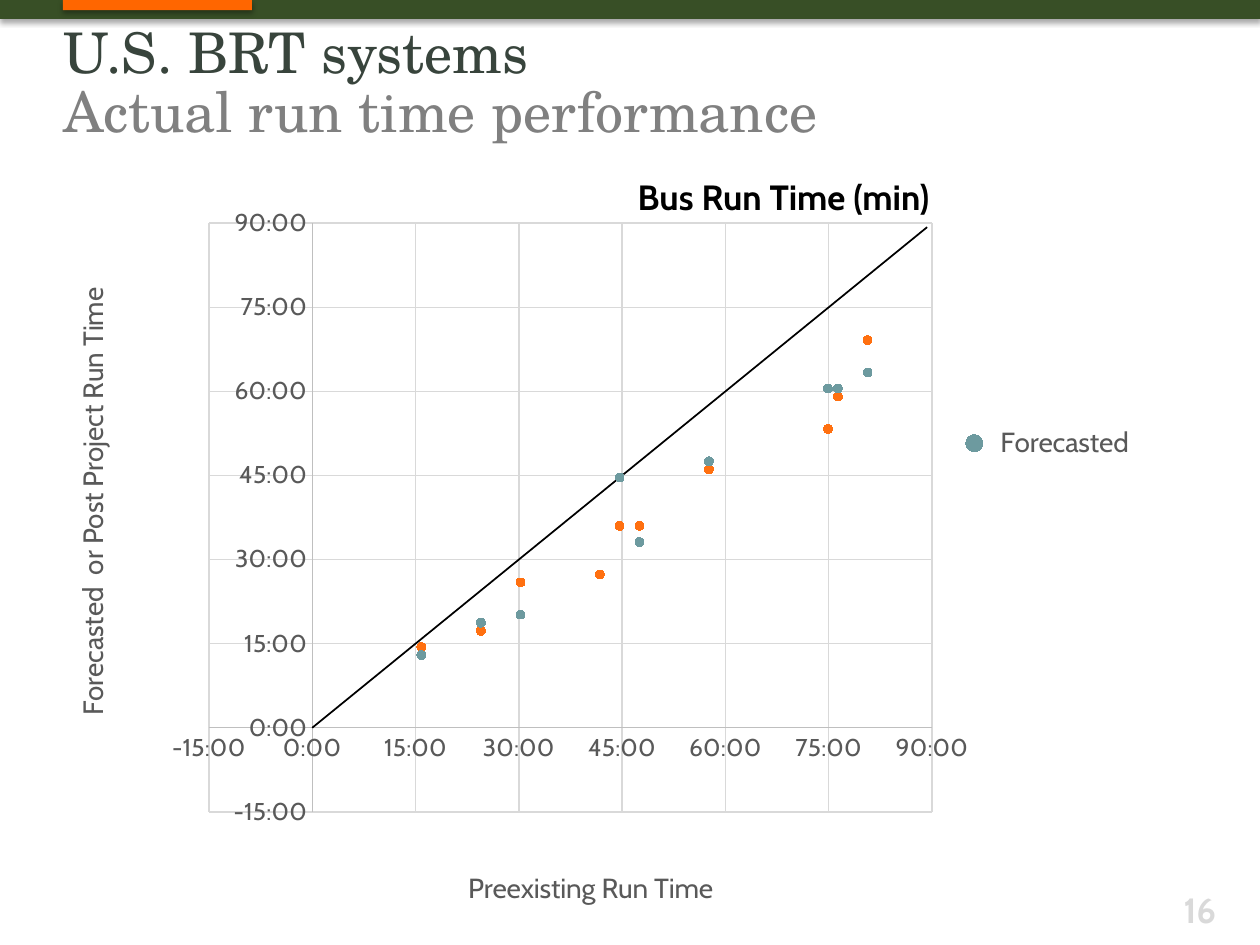
import dataclasses

import pptx
import pptx.chart.data
import pptx.dml.color
import pptx.enum.chart
import pptx.enum.shapes
import pptx.enum.text
import pptx.oxml
import pptx.oxml.ns
import pptx.util

QUARTER_HOUR = 15 / 1440
BEFORE = [0.033, 0.011, 0.056, 0.04, 0.021, 0.017, 0.052, 0.031, 0.053, 0.029]
FORECASTED = [0.023, 0.009, 0.044, 0.033, 0.014, 0.013, 0.042, 0.031, 0.042, None]
POST_PROJECT = [0.025, 0.01, 0.048, 0.032, 0.018, 0.012, 0.037, 0.025, 0.041, 0.019]
UNCHANGED = [0, 0.062]


@dataclasses.dataclass(frozen=True)
class Theme:
    heading_font: str = "TeX Gyre Schola"
    body_font: str = "Cabin"
    heading: str = "38443C"
    subheading: str = "808080"
    band: str = "384F26"
    accent: str = "FF6600"
    black: str = "000000"
    label: str = "595959"
    axis: str = "BFBFBF"
    pale: str = "D9D9D9"
    forecast: str = "6D9A9F"
    project: str = "FF7010"
    title_size: int = 32
    caption_size: int = 20
    legend_size: int = 16
    tick_size: int = 14
    chart_size: int = 10


def rgb(value):
    return pptx.dml.color.RGBColor.from_string(value)


class SlideBuilder:
    """Draws themed elements on a slide ruled into 100 columns and 75 rows."""

    def __init__(self, presentation, theme):
        self.theme = theme
        self.column = presentation.slide_width / 100
        self.row = presentation.slide_height / 75
        self.slide = presentation.slides.add_slide(presentation.slide_layouts[6])

    def place(self, left, top, width, height):
        return (int(left * self.column), int(top * self.row),
                int(width * self.column), int(height * self.row))

    def style(self, font, size, color, bold=False, name=None):
        font.name = name or self.theme.body_font
        font.size = pptx.util.Pt(size)
        font.color.rgb = rgb(color)
        font.bold = bold

    def bar(self, area, color):
        shape = self.slide.shapes.add_shape(
            pptx.enum.shapes.MSO_SHAPE.RECTANGLE, *self.place(*area))
        shape.fill.solid()
        shape.fill.fore_color.rgb = rgb(color)
        shape.line.fill.background()
        shape.shadow.inherit = False
        effects = shape._element.spPr.find(pptx.oxml.ns.qn("a:effectLst"))
        effects.append(pptx.oxml.parse_xml(
            f'<a:outerShdw {pptx.oxml.ns.nsdecls("a")} blurRad="39370" dist="22860" '
            'dir="5400000" rotWithShape="0"><a:srgbClr val="000000">'
            '<a:alpha val="35000"/></a:srgbClr></a:outerShdw>'))

    def text(self, area, text, size, colors, align="LEFT", bold=False, name=None,
             spacing=None, inset=True):
        frame = self.slide.shapes.add_textbox(*self.place(*area)).text_frame
        frame.word_wrap = True
        if not inset:
            frame.margin_left = frame.margin_right = 0
            frame.margin_top = frame.margin_bottom = 0
        frame.text = text
        paragraph = frame.paragraphs[0]
        paragraph.alignment = getattr(pptx.enum.text.PP_ALIGN, align)
        if spacing:
            paragraph.line_spacing = pptx.util.Pt(spacing)
        for run, color in zip(paragraph.runs, colors):
            self.style(run.font, size, color, bold, name)

    def layout(self, element, inner=False, **shares):
        qn = pptx.oxml.ns.qn
        for old in element.findall(qn("c:layout")):
            element.remove(old)
        target = '<c:layoutTarget val="inner"/>' if inner else ""
        modes = "".join(f'<c:{key}Mode val="edge"/>' for key in "xy")
        values = "".join(f'<c:{key} val="{share}"/>' for key, share in shares.items())
        layout = pptx.oxml.parse_xml(
            f'<c:layout {pptx.oxml.ns.nsdecls("c")}><c:manualLayout>'
            f'{target}{modes}{values}</c:manualLayout></c:layout>')
        overlay = element.find(qn("c:overlay"))
        if overlay is None:
            element.insert(0, layout)
        else:
            overlay.addprevious(layout)

    def axis(self, axis, title, x, y, rotation=0):
        axis.minimum_scale = -QUARTER_HOUR
        axis.maximum_scale = 6 * QUARTER_HOUR
        axis.major_unit = QUARTER_HOUR
        axis.major_tick_mark = pptx.enum.chart.XL_TICK_MARK.NONE
        axis.minor_tick_mark = pptx.enum.chart.XL_TICK_MARK.NONE
        axis.has_major_gridlines = True
        for line, color in ((axis.format.line, self.theme.axis),
                            (axis.major_gridlines.format.line, self.theme.pale)):
            line.color.rgb = rgb(color)
            line.width = pptx.util.Pt(0.75)
        axis.tick_labels.number_format = "[m]:ss"
        axis.tick_labels.number_format_is_linked = False
        self.style(axis.tick_labels.font, self.theme.tick_size, self.theme.label)
        frame = axis.axis_title.text_frame
        frame.text = title
        frame._txBody.bodyPr.set("rot", str(rotation * 60000))
        frame._txBody.bodyPr.set("vert", "horz")
        self.style(frame.paragraphs[0].runs[0].font, self.theme.legend_size, self.theme.label)
        self.layout(axis.axis_title._element, x=x, y=y)

    def legend(self, chart, hidden):
        chart.has_legend = True
        legend = chart.legend
        legend.position = pptx.enum.chart.XL_LEGEND_POSITION.RIGHT
        legend.include_in_layout = False
        self.style(legend.font, self.theme.legend_size, self.theme.label)
        overlay = legend._element.find(pptx.oxml.ns.qn("c:overlay"))
        overlay.addprevious(pptx.oxml.parse_xml(
            f'<c:legendEntry {pptx.oxml.ns.nsdecls("c")}><c:idx val="{hidden}"/>'
            '<c:delete val="1"/></c:legendEntry>'))
        self.layout(legend._element, x=0.83, y=0.28, w=0.17, h=0.13)

    def drop_missing_points(self, chart):
        qn = pptx.oxml.ns.qn
        for point in list(chart._chartSpace.iter(qn("c:pt"))):
            if point.find(qn("c:v")).text == "None":
                point.getparent().remove(point)

    def scatter(self, area, series_points, colors, diagonal):
        data = pptx.chart.data.XyChartData()
        for name, points in series_points.items():
            series = data.add_series(name)
            for x, y in points:
                series.add_data_point(x, y)
        chart = self.slide.shapes.add_chart(
            pptx.enum.chart.XL_CHART_TYPE.XY_SCATTER, *self.place(*area), data).chart
        self.drop_missing_points(chart)
        chart.has_title = False
        self.style(chart.font, self.theme.chart_size, self.theme.black)
        plot = chart.plots[0]
        plot.vary_by_categories = False
        for index, (series, color) in enumerate(zip(plot.series, colors)):
            marker = series.marker
            if index == diagonal:
                marker.style = pptx.enum.chart.XL_MARKER_STYLE.NONE
                series.format.line.color.rgb = rgb(color)
                series.format.line.width = pptx.util.Pt(1)
                continue
            series.format.line.fill.background()
            marker.style = pptx.enum.chart.XL_MARKER_STYLE.CIRCLE
            marker.size = 5
            marker.format.fill.solid()
            marker.format.fill.fore_color.rgb = rgb(color)
            marker.format.line.color.rgb = rgb(color)
        self.axis(chart.category_axis, "Preexisting Run Time", 0.37, 0.94)
        self.axis(chart.value_axis, "Forecasted  or Post Project Run Time", 0.005, 0.124, -90)
        self.legend(chart, diagonal)
        self.layout(chart._chartSpace.chart.plotArea, inner=True,
                    x=0.135, y=0.034, w=0.669, h=0.832)


def main():
    presentation = pptx.Presentation()
    presentation.slide_width = pptx.util.Inches(10)
    presentation.slide_height = pptx.util.Inches(7.5)
    theme = Theme()
    builder = SlideBuilder(presentation, theme)
    builder.bar((0, 0, 100, 1.5), theme.band)
    builder.bar((5, 0, 15, 0.8), theme.accent)
    builder.text((5, 2, 80.8, 9.5), "U.S. BRT systems\vActual run time performance",
                 theme.title_size, (theme.heading, theme.subheading),
                 name=theme.heading_font, spacing=34, inset=False)
    builder.text((88.3, 70, 9.2, 3.5), "16", theme.caption_size, (theme.pale,),
                 align="RIGHT", bold=True)
    builder.scatter((5, 15.8, 85.8, 56.7), {
        "Forecasted": zip(BEFORE, FORECASTED),
        "Series 2": zip(UNCHANGED, UNCHANGED),
        "Post Project": zip(BEFORE, POST_PROJECT),
    }, (theme.forecast, theme.black, theme.project), diagonal=1)
    builder.text((47.5, 13.4, 29.4, 4.4), "Bus Run Time (min)", theme.caption_size,
                 (theme.black,), align="CENTER", bold=True)
    presentation.save("out.pptx")


if __name__ == "__main__":
    main()
